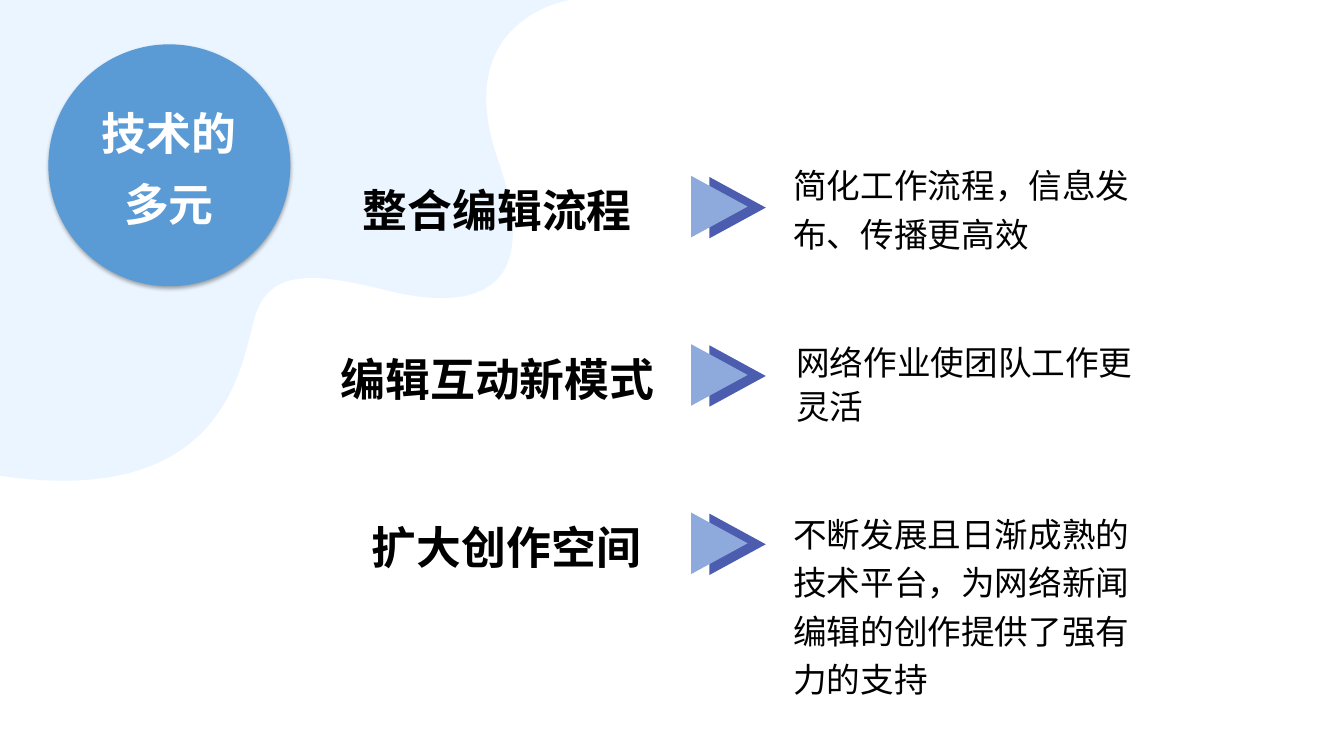
from dataclasses import dataclass

from lxml.etree import SubElement
from pptx import Presentation
from pptx.dml.color import RGBColor
from pptx.enum.shapes import MSO_SHAPE
from pptx.enum.text import MSO_ANCHOR, PP_ALIGN
from pptx.oxml.ns import qn
from pptx.shapes.autoshape import Shape
from pptx.shapes.shapetree import GroupShapes, SlideShapes
from pptx.util import Emu, Pt

PX = 9144  # EMU per px, 100 px to the inch
FONT = "Noto Sans CJK SC"
BLACK, WHITE = "000000", "FFFFFF"
PALE_BLUE, BADGE_BLUE = "EBF5FF", "5B9BD5"
ARROW_BACK, ARROW_FRONT = "4C5CAF", "8EAADC"

FIRST_ROW_TOP, ROW_PITCH = 177, 167
ARROW_LEFT, ARROW_WIDTH, ARROW_HEIGHT = 683, 61, 56

BLOB_START = (565, 0)
# Three points to a Bézier segment: two controls and the end.
BLOB_CURVES = [
    (565, 0), (445, 18), (494, 159),
    (543, 300), (459, 306), (387, 289),
    (315, 271), (266, 264), (252, 317),
    (238, 370), (219, 504), (0, 472),
    (0, 472), (0, 0), (0, 0),
]


@dataclass(frozen=True)
class Box:
    left: int
    top: int
    width: int
    height: int

    def emu(self) -> tuple[Emu, ...]:
        return tuple(Emu(length * PX) for length in
                     (self.left, self.top, self.width, self.height))


@dataclass(frozen=True)
class Row:
    heading: str
    heading_left: int
    heading_width: int
    detail: str
    detail_box: Box
    detail_spacing: float = 1.2


ROWS = [
    Row("整合编辑流程", 350, 288,
        "简化工作流程，信息发布、传播更高效", Box(777, 151, 362, 104)),
    Row("编辑互动新模式", 328, 336,
        "网络作业使团队工作更灵活", Box(780, 330, 359, 104), 1.1),
    Row("扩大创作空间", 359, 288,
        "不断发展且日渐成熟的技术平台，为网络新闻编辑的创作提供了强有力的支持",
        Box(777, 497, 373, 173)),
]


def color(value: str) -> RGBColor:
    return RGBColor.from_string(value)


def paint(shape: Shape, fill: str) -> None:
    shape.shadow.inherit = False
    shape.fill.solid()
    shape.fill.fore_color.rgb = color(fill)
    shape.line.fill.background()


def add_text(shapes: SlideShapes | GroupShapes, box: Box, *lines: str,
             size: int, ink: str = BLACK, bold: bool = False,
             spacing: float = 1.2, before: int = 0,
             align: PP_ALIGN = PP_ALIGN.LEFT,
             anchor: MSO_ANCHOR = MSO_ANCHOR.TOP,
             margins: bool = True) -> None:
    frame = shapes.add_textbox(*box.emu()).text_frame
    frame.word_wrap = True
    frame.vertical_anchor = anchor
    if not margins:
        frame.margin_left = frame.margin_right = 0
        frame.margin_top = frame.margin_bottom = 0
    for index, line in enumerate(lines):
        paragraph = frame.add_paragraph() if index else frame.paragraphs[0]
        paragraph.alignment = align
        paragraph.line_spacing = spacing
        paragraph.space_before = Pt(before)
        run = paragraph.add_run()
        run.text = line
        run.font.size = Pt(size)
        run.font.bold = bold
        run.font.name = FONT
        run.font.color.rgb = color(ink)
        SubElement(run.font._element, qn("a:ea"), typeface=FONT)


def add_blob(shapes: SlideShapes) -> None:
    """Draw the corner shape, joining each three line steps into one curve."""
    builder = shapes.build_freeform(*BLOB_START, scale=PX)
    builder.add_line_segments(BLOB_CURVES, close=True)
    blob = builder.convert_to_shape()
    paint(blob, PALE_BLUE)
    steps = list(blob._element.iter(qn("a:lnTo")))
    for first in range(0, len(BLOB_CURVES), 3):
        segment = steps[first:first + 3]
        curve = segment[0].getparent().makeelement(qn("a:cubicBezTo"))
        segment[0].addprevious(curve)
        for step in segment:
            curve.append(step[0])
            step.getparent().remove(step)


def add_soft_shadow(shape: Shape) -> None:
    effects = shape._element.spPr.find(qn("a:effectLst"))
    shadow = SubElement(effects, qn("a:outerShdw"), blurRad=str(Pt(3)),
                        dist=str(Pt(1.8)), dir="5400000", rotWithShape="0")
    tint = SubElement(shadow, qn("a:srgbClr"), val=BLACK)
    SubElement(tint, qn("a:alpha"), val="35000")


def add_badge(shapes: SlideShapes) -> None:
    group = shapes.add_group_shape().shapes
    circle = group.add_shape(MSO_SHAPE.OVAL, *Box(48, 44, 240, 240).emu())
    paint(circle, BADGE_BLUE)
    add_soft_shadow(circle)
    add_text(group, Box(77, 99, 181, 130), "技术的", "多元", size=32,
             ink=WHITE, bold=True, spacing=1.1, before=8,
             align=PP_ALIGN.CENTER, anchor=MSO_ANCHOR.MIDDLE, margins=False)


def add_double_arrow(shapes: SlideShapes, top: int) -> None:
    for dx, dy, fill in ((18, 1, ARROW_BACK), (0, 0, ARROW_FRONT)):
        box = Box(ARROW_LEFT + dx, top + dy, ARROW_WIDTH, ARROW_HEIGHT)
        triangle = shapes.add_shape(MSO_SHAPE.ISOSCELES_TRIANGLE, *box.emu())
        triangle.rotation = 90
        paint(triangle, fill)


def add_row(shapes: SlideShapes, row: Row, top: int) -> None:
    add_double_arrow(shapes, top)
    add_text(shapes, Box(row.heading_left, top + 1, row.heading_width, 50),
             row.heading, size=32, bold=True, anchor=MSO_ANCHOR.MIDDLE)
    add_text(shapes, row.detail_box, row.detail, size=24,
             spacing=row.detail_spacing)


def main() -> None:
    presentation = Presentation()
    presentation.slide_width = Emu(1333 * PX)
    presentation.slide_height = Emu(750 * PX)
    slide = presentation.slides.add_slide(presentation.slide_layouts[6])
    add_blob(slide.shapes)
    add_badge(slide.shapes)
    for index, row in enumerate(ROWS):
        add_row(slide.shapes, row, FIRST_ROW_TOP + index * ROW_PITCH)
    presentation.save("out.pptx")


if __name__ == "__main__":
    main()
